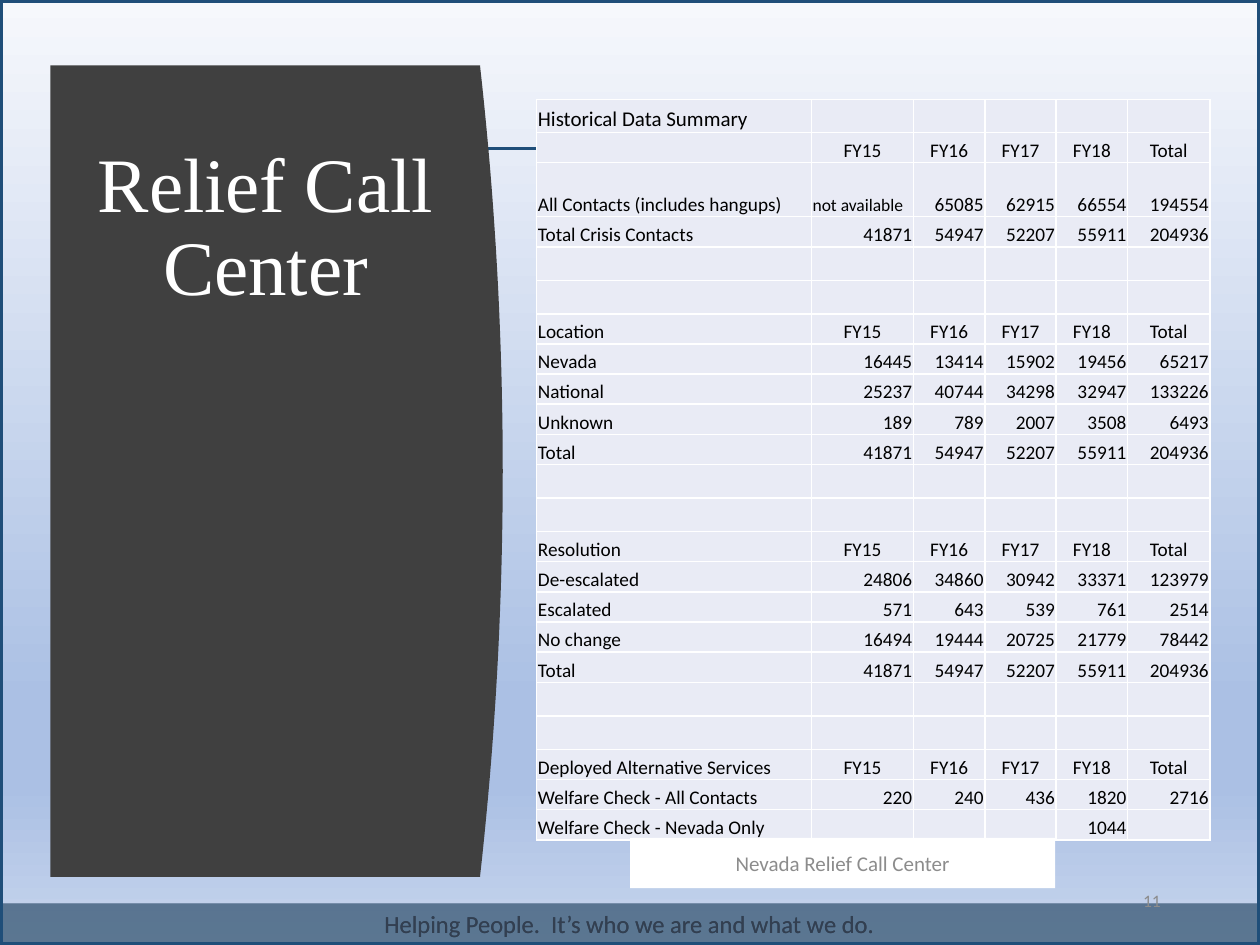
from dataclasses import dataclass

import pptx
import pptx.dml.color
import pptx.enum.shapes
import pptx.enum.text
import pptx.oxml
import pptx.oxml.ns
import pptx.util
from lxml import etree

Pt = pptx.util.Pt
RGBColor = pptx.dml.color.RGBColor
PP_ALIGN = pptx.enum.text.PP_ALIGN
ANCHOR = pptx.enum.text.MSO_ANCHOR
RECT = pptx.enum.shapes.MSO_SHAPE.RECTANGLE
qn = pptx.oxml.ns.qn

WHITE = RGBColor(0xFF, 0xFF, 0xFF)
BLACK = RGBColor(0x00, 0x00, 0x00)
GRAY = RGBColor(0x8C, 0x8C, 0x8C)
CHARCOAL = RGBColor(0x40, 0x40, 0x40)
NAVY = RGBColor(0x1F, 0x4E, 0x79)
BAND = RGBColor(0x2D, 0x4E, 0x6B)
SLATE = RGBColor(0x33, 0x3F, 0x50)
CELL = RGBColor(0xE9, 0xEB, 0xF5)
SKY = RGBColor(0xAB, 0xC0, 0xE4)
BACKGROUND = ((0, RGBColor(0xF6, 0xF8, 0xFC)), (74, SKY), (83, SKY),
              (100, RGBColor(0xC7, 0xD5, 0xED)))


@dataclass
class Box:
    left: float
    top: float
    width: float
    height: float

    def emu(self) -> tuple:
        return Pt(self.left), Pt(self.top), Pt(self.width), Pt(self.height)


@dataclass
class Style:
    size: float
    color: RGBColor
    align: PP_ALIGN = PP_ALIGN.CENTER
    font: str = "Calibri"


@dataclass
class Row:
    label: str = ""
    values: tuple = ("",) * 5
    height: float = 17.25
    size: float = 11


def style_paragraph(p, style: Style) -> None:
    p.alignment = style.align
    p.font.size = Pt(style.size)
    p.font.name = style.font
    p.font.color.rgb = style.color


def write(sp, text: str, style: Style, anchor: ANCHOR, inset: float):
    tf = sp.text_frame
    tf.word_wrap = True
    tf.vertical_anchor = anchor
    tf.margin_left = tf.margin_right = tf.margin_top = tf.margin_bottom = Pt(inset)
    p = tf.paragraphs[0]
    p.text = text
    style_paragraph(p, style)
    return p


def add_rect(s, box: Box, fill: RGBColor | None):
    sp = s.shapes.add_shape(RECT, *box.emu())
    sp.shadow.inherit = False
    sp.line.fill.background()
    if fill is None:
        sp.fill.background()
    else:
        sp.fill.solid()
        sp.fill.fore_color.rgb = fill
    return sp


def set_background(s) -> None:
    fill = s.background.fill
    fill.gradient()
    fill.gradient_angle = 270
    stops = s.background._cSld.find(".//" + qn("a:gsLst"))
    for stop in list(stops):
        stops.remove(stop)
    for position, color in BACKGROUND:
        stop = etree.SubElement(stops, qn("a:gs"), pos=str(position * 1000))
        etree.SubElement(stop, qn("a:srgbClr"), val=str(color))


def add_rule(s, x1: float, x2: float, y: float) -> None:
    line = s.shapes.add_connector(pptx.enum.shapes.MSO_CONNECTOR.STRAIGHT,
                                  Pt(x1), Pt(y), Pt(x2), Pt(y))
    line.line.color.rgb = NAVY
    line.line.width = Pt(2)
    ln = line.line._get_or_add_ln()
    for end in ("a:headEnd", "a:tailEnd"):
        etree.SubElement(ln, qn(end), type="diamond")
    etree.SubElement(line._element.spPr, qn("a:effectLst"))


def add_curved_panel(s, box: Box, bulge: float, steps: int = 40) -> None:
    """Panel whose right side is a shallow parabola."""
    edge = box.left + box.width - bulge
    points = []
    for i in range(steps + 1):
        t = i / steps
        points.append((edge + bulge * 4 * t * (1 - t), box.top + box.height * t))
    points.append((box.left, box.top + box.height))
    fb = s.shapes.build_freeform(Pt(box.left), Pt(box.top))
    fb.add_line_segments([(Pt(x), Pt(y)) for x, y in points])
    sp = fb.convert_to_shape()
    sp.shadow.inherit = False
    sp.fill.solid()
    sp.fill.fore_color.rgb = CHARCOAL
    sp.line.fill.background()


def fill_cell(cell, text: str, style: Style) -> None:
    cell.vertical_anchor = ANCHOR.BOTTOM
    cell.margin_left = cell.margin_right = cell.margin_top = Pt(0.7)
    cell.margin_bottom = 0
    p = cell.text_frame.paragraphs[0]
    if text:
        p.text = text
    style_paragraph(p, style)
    tc_pr = cell._tc.get_or_add_tcPr()
    for side in ("a:lnL", "a:lnR", "a:lnT", "a:lnB"):
        ln = etree.SubElement(tc_pr, qn(side), w=str(Pt(1)))
        solid = etree.SubElement(ln, qn("a:solidFill"))
        etree.SubElement(solid, qn("a:srgbClr"), val=str(WHITE))
    cell.fill.solid()
    cell.fill.fore_color.rgb = CELL


def add_data_table(s, box: Box, widths: tuple, rows: list[Row]) -> None:
    table = s.shapes.add_table(len(rows), len(widths), *box.emu()).table
    table.first_row = table.horz_banding = False
    for column, width in zip(table.columns, widths):
        column.width = Pt(width)
    for r, row in enumerate(rows):
        table.rows[r].height = Pt(row.height)
        fill_cell(table.cell(r, 0), row.label, Style(row.size, BLACK, PP_ALIGN.LEFT))
        for c, value in enumerate(row.values, 1):
            style = Style(row.size, BLACK, PP_ALIGN.RIGHT)
            if value in YEARS:
                style.align = PP_ALIGN.CENTER
            elif value == "not available":
                style = Style(10, BLACK, PP_ALIGN.LEFT)
            fill_cell(table.cell(r, c), value, style)


YEARS = ("FY15", "FY16", "FY17", "FY18", "Total")
TOTALS = ("41871", "54947", "52207", "55911", "204936")
GAP = [Row(height=19.15)] * 2
ROWS = [
    Row("Historical Data Summary", height=18.7, size=12),
    Row("", YEARS),
    Row("All Contacts (includes hangups)",
        ("not available", "65085", "62915", "66554", "194554"), height=31),
    Row("Total Crisis Contacts", TOTALS),
    *GAP,
    Row("Location", YEARS),
    Row("Nevada", ("16445", "13414", "15902", "19456", "65217")),
    Row("National", ("25237", "40744", "34298", "32947", "133226")),
    Row("Unknown", ("189", "789", "2007", "3508", "6493")),
    Row("Total", TOTALS),
    *GAP,
    Row("Resolution", YEARS),
    Row("De-escalated", ("24806", "34860", "30942", "33371", "123979")),
    Row("Escalated", ("571", "643", "539", "761", "2514")),
    Row("No change", ("16494", "19444", "20725", "21779", "78442")),
    Row("Total", TOTALS),
    *GAP,
    Row("Deployed Alternative Services", YEARS),
    Row("Welfare Check - All Contacts", ("220", "240", "436", "1820", "2716")),
    Row("Welfare Check - Nevada Only", ("", "", "", "1044", "")),
]

prs = pptx.Presentation()
prs.slide_width, prs.slide_height = Pt(720), Pt(540)
s = prs.slides.add_slide(prs.slide_layouts[6])
set_background(s)

# Motto band: two translucent layers
for _ in range(2):
    sp = add_rect(s, Box(0.7, 516.2, 718, 23.8), BAND)
    color = sp._element.spPr.find(qn("a:solidFill"))[0]
    etree.SubElement(color, qn("a:alpha"), val="45000")
    write(sp, "Helping People.  It’s who we are and what we do.",
          Style(14, SLATE), ANCHOR.MIDDLE, 2.9)

# Slide frame and rule
frame = add_rect(s, Box(0, 0, 720, 540), None)
frame.line.color.rgb = NAVY
frame.line.width = Pt(3)
add_rule(s, 94.3, 634.3, 85)

# Title panel
add_curved_panel(s, Box(28.8, 37.4, 258.5, 463.7), bulge=13)
sp = s.shapes.add_textbox(*Box(51.1, 79.9, 201.6, 377.3).emu())
p = write(sp, "Relief Call Center", Style(44, WHITE, font="Times New Roman"),
          ANCHOR.TOP, 3.6)
p.line_spacing = 0.9

# Slide number
sp = s.shapes.add_textbox(*Box(633.6, 500.4, 36.7, 28.8).emu())
p = write(sp, "11", Style(10, GRAY, PP_ALIGN.RIGHT), ANCHOR.MIDDLE, 7.2)
p.space_after = Pt(6)

# Call data and footer
add_data_table(s, Box(306.7, 56.9, 384.7, 423.4),
               (157, 58.3, 40.8, 40.8, 40.8, 47), ROWS)
sp = add_rect(s, Box(360, 478.8, 243, 28.8), WHITE)
write(sp, "Nevada Relief Call Center", Style(12, GRAY), ANCHOR.MIDDLE, 3.6)

prs.save("out.pptx")
